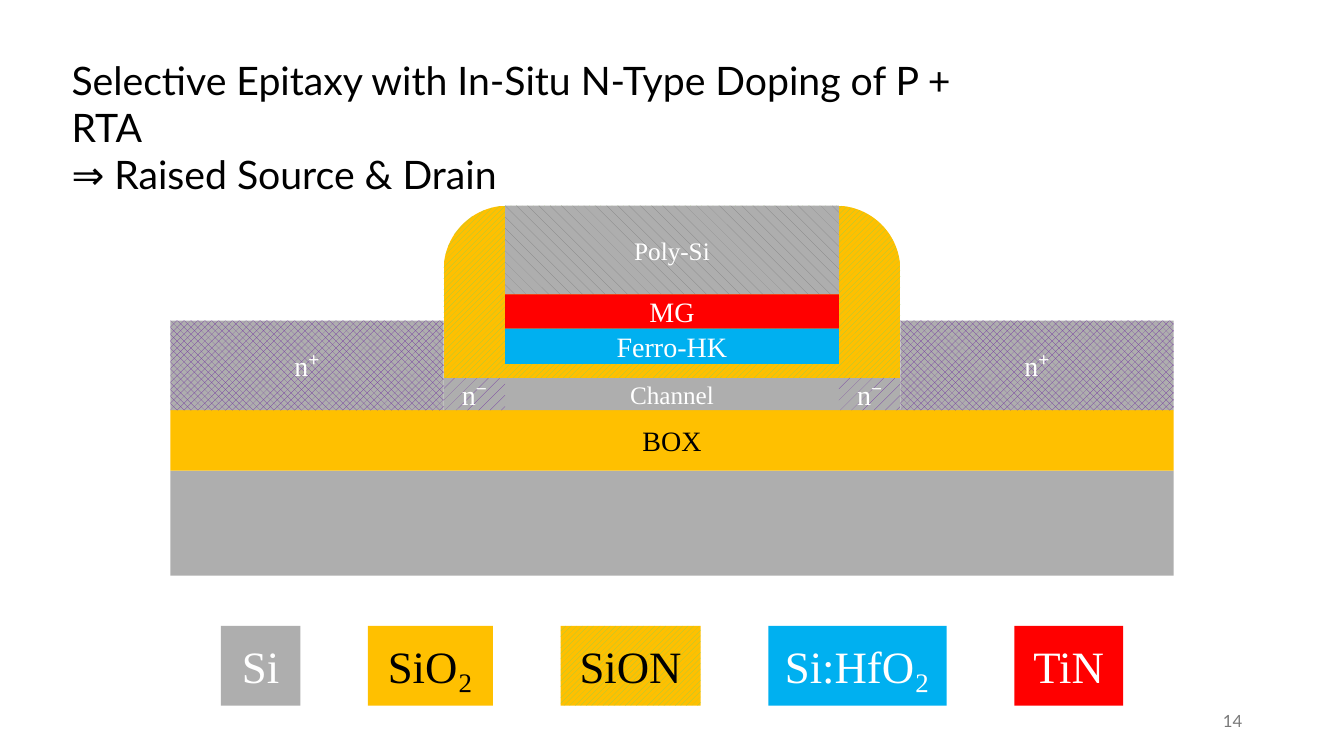
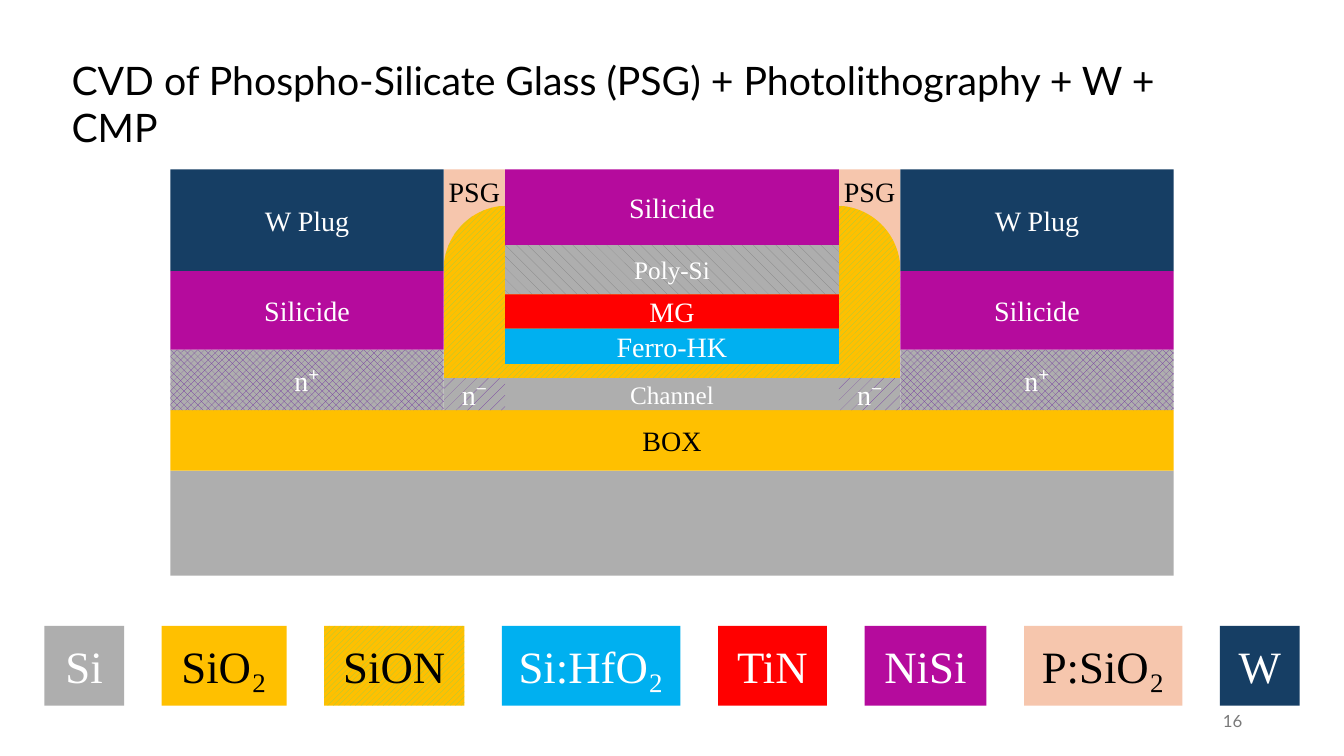
from dataclasses import dataclass
from typing import Optional

from pptx import Presentation
from pptx import util as u
from pptx.dml.color import RGBColor
from pptx.enum import dml, shapes, text


@dataclass(frozen=True)
class Theme:
    """Colours, fonts and type sizes shared by every slide."""
    black: str = "000000"
    white: str = "FFFFFF"
    page_grey: str = "797979"
    silicon: str = "AEAEAE"
    oxide: str = "FFC000"
    dopant: str = "7030A0"
    nitride: str = "92D050"
    poly_grain: str = "808080"
    ferroelectric: str = "00B0F0"
    metal_gate: str = "FF0000"
    silicide: str = "B50B9D"
    glass: str = "F6C6AD"
    tungsten: str = "163E64"
    title_font: str = "Lato"
    label_font: str = "Times New Roman"
    title_size: int = 28
    legend_size: int = 32
    label_size: int = 20
    small_size: int = 18
    page_size: int = 12


THEME = Theme()


@dataclass(frozen=True)
class Material:
    fill: str
    ink: str = THEME.white
    pattern: Optional[dml.MSO_PATTERN] = None
    grain: str = THEME.black


@dataclass(frozen=True)
class Layer:
    """A block between two column edges; a mirrored one is drawn on both sides."""
    label: str
    material: Material
    columns: tuple[int, int]
    top: float
    bottom: float
    mirrored: bool = False
    size: int = THEME.label_size
    rounded: bool = False
    top_label: bool = False


@dataclass(frozen=True)
class LegendItem:
    label: str
    material: Material
    width: float


@dataclass(frozen=True)
class Step:
    """One process step, shown on one slide."""
    title: tuple[str, ...]
    title_width: float
    page: int
    layers: tuple[Layer, ...]
    legend: tuple[LegendItem, ...]
    legend_margin: float


# Materials
SI = Material(THEME.silicon)
LIGHT_N = Material(THEME.silicon, pattern=dml.MSO_PATTERN.PERCENT_10, grain=THEME.dopant)
HEAVY_N = Material(THEME.silicon, pattern=dml.MSO_PATTERN.PERCENT_50, grain=THEME.dopant)
POLY = Material(THEME.silicon, pattern=dml.MSO_PATTERN.SHINGLE, grain=THEME.poly_grain)
SIO2 = Material(THEME.oxide, THEME.black)
SION = Material(THEME.oxide, THEME.black,
                dml.MSO_PATTERN.WIDE_UPWARD_DIAGONAL, THEME.nitride)
HFO2 = Material(THEME.ferroelectric)
TIN = Material(THEME.metal_gate)
NISI = Material(THEME.silicide)
PSG = Material(THEME.glass, THEME.black)
W = Material(THEME.tungsten)

# Grid: column edges and the heights of the main interfaces, in inches
SLIDE_WIDTH, SLIDE_HEIGHT = 13.33, 7.5
COLUMNS = (1.69, 4.4, 5.01, 8.32, 8.93, 11.64)
LAST_COLUMN = len(COLUMNS) - 1
ALL, SIDE, SPACER, GATE, STACK = (0, 5), (0, 1), (1, 2), (2, 3), (1, 4)
PLUG_TOP, SPACER_TOP, SILICIDE_TOP = 1.68, 2.04, 2.69
METAL_TOP, FERRO_TOP, FERRO_BOTTOM = 2.92, 3.26, 3.61
CHANNEL_TOP, BOX_TOP, WAFER_TOP, WAFER_BOTTOM = 3.75, 4.07, 4.67, 5.71
LEGEND_TOP, LEGEND_HEIGHT = 6.21, 0.79


def device(source_top: float, poly_top: float) -> tuple[Layer, ...]:
    """Transistor layers common to both steps."""
    return (
        Layer("", SION, STACK, SPACER_TOP, CHANNEL_TOP, rounded=True),
        Layer("", SI, ALL, WAFER_TOP, WAFER_BOTTOM),
        Layer("BOX", SIO2, ALL, BOX_TOP, WAFER_TOP),
        Layer("Channel", SI, GATE, CHANNEL_TOP, BOX_TOP, size=THEME.small_size),
        Layer("n⁻", LIGHT_N, SPACER, CHANNEL_TOP, BOX_TOP, mirrored=True),
        Layer("n⁺", HEAVY_N, SIDE, source_top, BOX_TOP, mirrored=True),
        Layer("Poly-Si", POLY, GATE, poly_top, METAL_TOP, size=THEME.small_size),
        Layer("MG", TIN, GATE, METAL_TOP, FERRO_TOP),
        Layer("Ferro-HK", HFO2, GATE, FERRO_TOP, FERRO_BOTTOM),
    )


BASE_LEGEND = (
    LegendItem("Si", SI, 0.79),
    LegendItem("SiO₂", SIO2, 1.24),
    LegendItem("SiON", SION, 1.39),
    LegendItem("Si:HfO₂", HFO2, 1.77),
    LegendItem("TiN", TIN, 1.08),
)
CONTACT_LEGEND = (
    LegendItem("NiSi", NISI, 1.21),
    LegendItem("P:SiO₂", PSG, 1.57),
    LegendItem("W", W, 0.79),
)

RAISED_TOP, POLY_TOP = 3.47, 2.43
STEPS = (
    Step(("Selective Epitaxy with In-Situ N-Type Doping of P + RTA",
          "⇒ Raised Source & Drain"),
         9.22, 14, device(3.18, SPACER_TOP), BASE_LEGEND, 2.19),
    Step(("CVD of Phospho-Silicate Glass (PSG) + Photolithography + W + CMP",),
         11.61, 16,
         (Layer("PSG", PSG, SPACER, PLUG_TOP, CHANNEL_TOP, mirrored=True, top_label=True),
          *device(RAISED_TOP, POLY_TOP),
          Layer("W Plug", W, SIDE, PLUG_TOP, SILICIDE_TOP, mirrored=True),
          Layer("Silicide", NISI, SIDE, SILICIDE_TOP, RAISED_TOP, mirrored=True),
          Layer("Silicide", NISI, GATE, PLUG_TOP, POLY_TOP)),
         BASE_LEGEND + CONTACT_LEGEND, 0.44),
)


def add_text(paragraph, words: str, font: str, size: int, color: str,
             align: text.PP_ALIGN) -> None:
    paragraph.alignment = align
    run = paragraph.add_run()
    run.text = words
    run.font.name = font
    run.font.size = u.Pt(size)
    run.font.color.rgb = RGBColor.from_string(color)


def add_block(container, left: float, top: float, width: float, height: float,
              material: Material, label: str, size: int, rounded: bool = False):
    """Draw one borderless block of a material with a centred label."""
    kind = (shapes.MSO_SHAPE.ROUND_2_SAME_RECTANGLE if rounded
            else shapes.MSO_SHAPE.RECTANGLE)
    shape = container.add_shape(kind, *map(u.Inches, (left, top, width, height)))
    shape.shadow.inherit = False
    shape.line.fill.background()
    if rounded:
        shape.adjustments[0], shape.adjustments[1] = 0.373, 0
    if material.pattern is None:
        shape.fill.solid()
        shape.fill.fore_color.rgb = RGBColor.from_string(material.fill)
    else:
        shape.fill.patterned()
        shape.fill.pattern = material.pattern
        shape.fill.fore_color.rgb = RGBColor.from_string(material.grain)
        shape.fill.back_color.rgb = RGBColor.from_string(material.fill)
    if label:
        add_text(shape.text_frame.paragraphs[0], label, THEME.label_font, size,
                 material.ink, text.PP_ALIGN.CENTER)
    return shape


def add_layer(slide, layer: Layer) -> None:
    first, last = layer.columns
    spans = [(first, last)]
    if layer.mirrored:
        spans.append((LAST_COLUMN - last, LAST_COLUMN - first))
    for start, end in spans:
        left = COLUMNS[start]
        shape = add_block(slide.shapes, left, layer.top, COLUMNS[end] - left,
                          layer.bottom - layer.top, layer.material, layer.label,
                          layer.size, layer.rounded)
        if layer.top_label:
            frame = shape.text_frame
            frame.vertical_anchor = text.MSO_ANCHOR.TOP
            frame.margin_left = frame.margin_right = 0


def add_legend(slide, items: tuple[LegendItem, ...], margin: float) -> None:
    """Spread the legend with equal gaps between equal side margins."""
    free = SLIDE_WIDTH - 2 * margin - sum(item.width for item in items)
    gap = free / (len(items) - 1)
    group = slide.shapes.add_group_shape()
    left = margin
    for item in items:
        add_block(group.shapes, left, LEGEND_TOP, item.width, LEGEND_HEIGHT,
                  item.material, item.label, THEME.legend_size)
        left += item.width + gap


def add_title(slide, lines: tuple[str, ...], width: float) -> None:
    title = slide.shapes.title
    title.left, title.top = u.Inches(0.61), u.Inches(0.51)
    title.width, title.height = u.Inches(width), u.Inches(0.1 + 0.47 * len(lines))
    frame = title.text_frame
    frame.word_wrap = True
    frame.auto_size = text.MSO_AUTO_SIZE.NONE
    frame.vertical_anchor = text.MSO_ANCHOR.TOP
    for index, line in enumerate(lines):
        paragraph = frame.add_paragraph() if index else frame.paragraphs[0]
        add_text(paragraph, line, THEME.title_font, THEME.title_size,
                 THEME.black, text.PP_ALIGN.LEFT)


def add_page_number(slide, number: int) -> None:
    box = slide.shapes.add_textbox(*map(u.Inches, (9.42, 6.95, 3, 0.4)))
    frame = box.text_frame
    frame.word_wrap = True
    frame.vertical_anchor = text.MSO_ANCHOR.MIDDLE
    add_text(frame.paragraphs[0], str(number), THEME.title_font, THEME.page_size,
             THEME.page_grey, text.PP_ALIGN.RIGHT)


def main() -> None:
    presentation = Presentation()
    presentation.slide_width = u.Inches(SLIDE_WIDTH)
    presentation.slide_height = u.Inches(SLIDE_HEIGHT)
    title_only = presentation.slide_layouts.get_by_name("Title Only")
    for step in STEPS:
        slide = presentation.slides.add_slide(title_only)
        add_title(slide, step.title, step.title_width)
        for layer in step.layers:
            add_layer(slide, layer)
        add_legend(slide, step.legend, step.legend_margin)
        add_page_number(slide, step.page)
    presentation.save("out.pptx")


if __name__ == "__main__":
    main()
